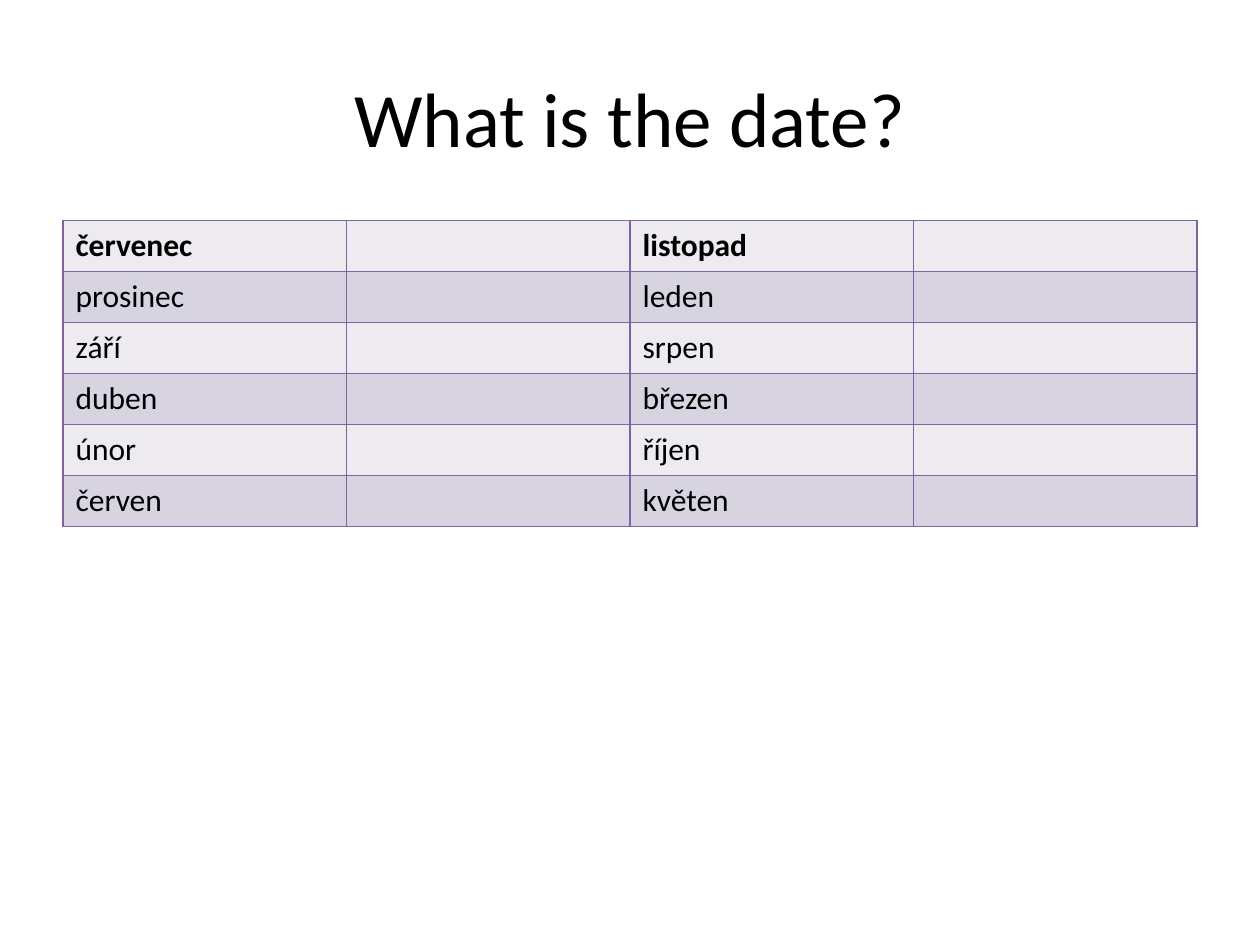
from lxml import etree
from pptx import Presentation
from pptx.dml.color import RGBColor
from pptx.enum.text import MSO_ANCHOR, PP_ALIGN
from pptx.oxml.ns import qn
from pptx.util import Inches, Pt

CENTER = PP_ALIGN.CENTER
MIDDLE = MSO_ANCHOR.MIDDLE
FONT = "Calibri"
BLACK, PURPLE = "000000", "8064A2"
BANDS = ("EDEAF0", "D8D3E0")
SIDES = ("a:lnL", "a:lnR", "a:lnT", "a:lnB")
MONTHS = [
    ("červenec", "listopad"),
    ("prosinec", "leden"),
    ("září", "srpen"),
    ("duben", "březen"),
    ("únor", "říjen"),
    ("červen", "květen"),
]


def paint(target, color):
    """Give a fill or line format a solid colour."""
    target.solid()
    target.fore_color.rgb = RGBColor.from_string(color)


def style(para, size, bold=False):
    """Set the font of a paragraph."""
    font = para.font
    font.name, font.size, font.bold = FONT, Pt(size), bold
    paint(font.fill, BLACK)


def add_title(slide, text):
    """Add the centred heading."""
    box = slide.shapes.add_textbox(Inches(0.5), Inches(0.3), Inches(9), Inches(1.25))
    frame = box.text_frame
    frame.word_wrap = True
    frame.vertical_anchor = MIDDLE
    frame.text = text
    para = frame.paragraphs[0]
    para.alignment = CENTER
    style(para, 44)


def add_border(cell, color, width):
    """Draw all four borders of a cell."""
    props = cell._tc.get_or_add_tcPr()
    for spot, side in enumerate(SIDES):
        line = etree.Element(qn(side), w=str(Pt(width)))
        fill = etree.SubElement(line, qn("a:solidFill"))
        etree.SubElement(fill, qn("a:srgbClr"), val=color)
        props.insert(spot, line)


def add_months(slide):
    """Add the month table with an empty answer column after each name."""
    table = slide.shapes.add_table(
        len(MONTHS), 4, Inches(0.5), Inches(1.75), Inches(9), Inches(2.43)
    ).table
    for row, (left, right) in enumerate(MONTHS):
        for col, text in enumerate((left, "", right, "")):
            cell = table.cell(row, col)
            cell.text = text
            style(cell.text_frame.paragraphs[0], 18, row == 0)
            paint(cell.fill, BANDS[row % 2])
            add_border(cell, PURPLE, 1)


def main():
    """Build and save the slide."""
    deck = Presentation()
    deck.slide_width, deck.slide_height = Inches(10), Inches(7.5)
    slide = deck.slides.add_slide(deck.slide_layouts[6])
    add_title(slide, "What is the date?")
    add_months(slide)
    deck.save("out.pptx")


if __name__ == "__main__":
    main()
